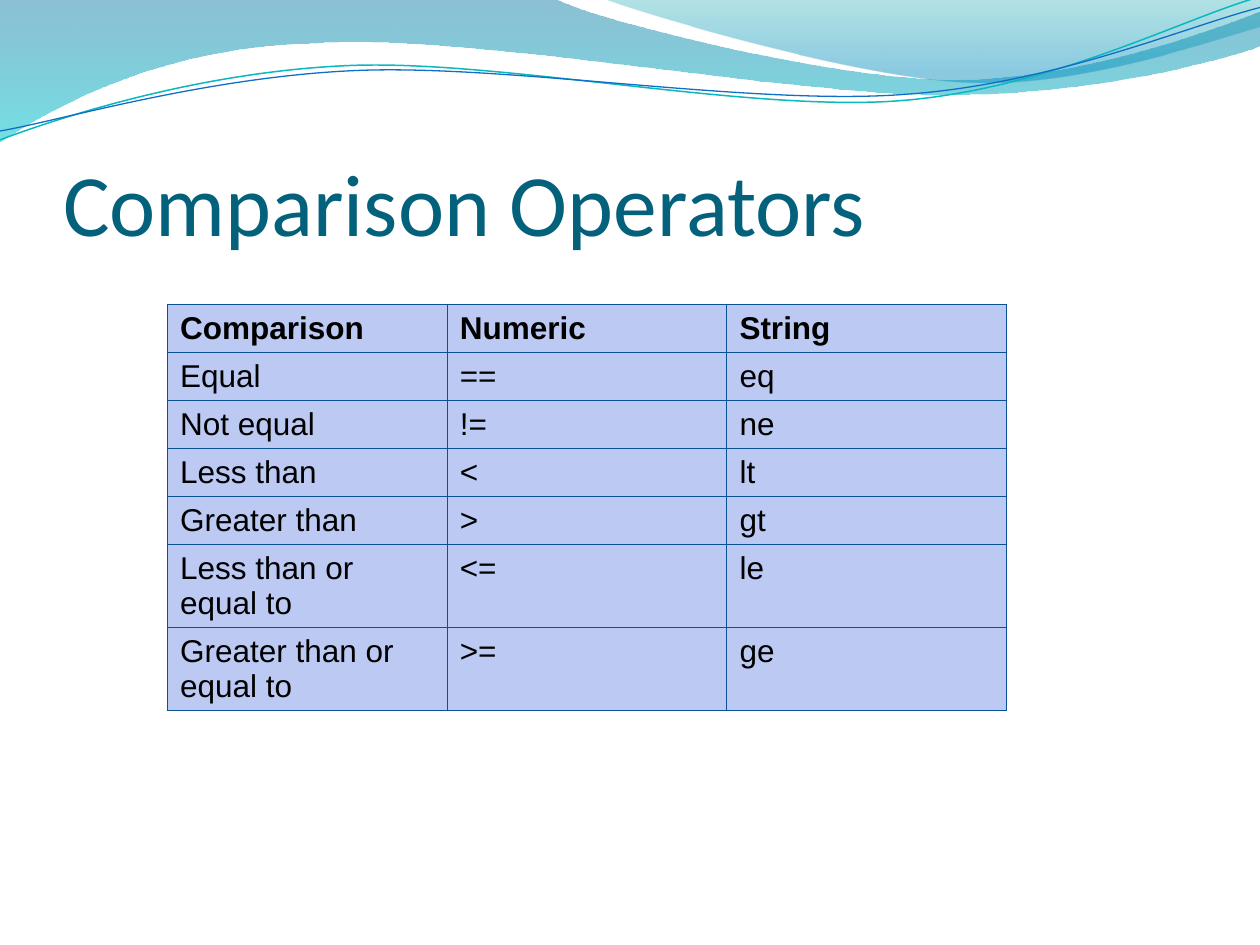
from math import cos, radians, sin

from lxml.etree import SubElement
from pptx import Presentation
from pptx.dml.color import RGBColor
from pptx.enum.text import MSO_ANCHOR, MSO_AUTO_SIZE, PP_ALIGN
from pptx.oxml.ns import qn
from pptx.util import Inches, Pt

TITLE = RGBColor(0x04, 0x61, 0x7B)
BLACK = RGBColor(0x00, 0x00, 0x00)
CELL = RGBColor(0xBB, 0xC9, 0xF3)
BORDER = RGBColor(0x09, 0x52, 0x95)
DEEP_BLUE = RGBColor(0x00, 0x74, 0xA1)
AQUA = RGBColor(0x00, 0xC6, 0xCF)
TEAL = RGBColor(0x00, 0xA1, 0xA9)
SKY = RGBColor(0x00, 0x8B, 0xBF)
TEAL_LINE = RGBColor(0x0A, 0xB8, 0xBF)
BLUE_LINE = RGBColor(0x0F, 0x6F, 0xC6)

WIDE_WAVE = [
    [(0, 0)], [(4.4, -0.01)],
    [(4.76, 0.17), (6.64, 0.63), (7.58, 0.63)],
    [(8.53, 0.63), (9.58, 0.26), (10, 0.09)],
    [(10.01, 0.36)],
    [(9.83, 0.44), (8.7, 0.76), (7.46, 0.75)],
    [(6.22, 0.75), (3.82, 0.28), (2.57, 0.34)],
    [(1.29, 0.36), (0.46, 0.83), (-0.01, 1.13)],
    [(0, 0)],
]
RIGHT_WAVE = [
    [(4.79, -0.01)],
    [(5.09, 0.11), (6.82, 0.62), (7.69, 0.65)],
    [(8.56, 0.69), (9.61, 0.32), (10, 0.21)],
    [(10, 0)], [(4.79, -0.01)],
]
TEAL_CURVE = [
    [(0, 1.11)],
    [(0.48, 0.93), (1.58, 0.57), (2.77, 0.52)],
    [(3.95, 0.47), (5.93, 0.89), (7.13, 0.8)],
    [(8.33, 0.71), (9.38, 0.15), (9.98, -0.02)],
]
BLUE_CURVE = [
    [(0, 1.04)],
    [(0.47, 0.96), (1.64, 0.61), (2.83, 0.56)],
    [(4.03, 0.51), (5.97, 0.84), (7.17, 0.75)],
    [(8.36, 0.67), (9.41, 0.21), (10, 0.06)],
]
ROWS = [
    ("Comparison", "Numeric", "String"),
    ("Equal", "==", "eq"),
    ("Not equal", "!=", "ne"),
    ("Less than", "<", "lt"),
    ("Greater than", ">", "gt"),
    ("Less than or equal to", "<=", "le"),
    ("Greater than or equal to", ">=", "ge"),
]


def turn(point, center, degrees):
    """Return the point turned clockwise about the center."""
    a = radians(degrees)
    dx, dy = point[0] - center[0], point[1] - center[1]
    return center[0] + dx * cos(a) - dy * sin(a), center[1] + dx * sin(a) + dy * cos(a)


class SlideBuilder:
    """Hold the style and the current slide."""

    title_font, body_font = "Calibri", "Arial"

    def __init__(self, s):
        self.s = s

    def style(self, p, font, size, color, bold=False):
        for r in p.runs:
            r.font.name, r.font.size, r.font.bold = font, Pt(size), bold
            r.font.color.rgb = color

    def outline(self, segments, close):
        points = [(Inches(x), Inches(y)) for segment in segments for x, y in segment]
        builder = self.s.shapes.build_freeform(*points[0])
        builder.add_line_segments(points[1:], close=close)
        sp = builder.convert_to_shape()
        sp.shadow.inherit = False
        lines = iter(list(sp.element.iter(qn("a:lnTo"))))
        for segment in segments[1:]:
            first, *rest = [next(lines) for _ in segment]
            if rest:
                curve = first.makeelement(qn("a:cubicBezTo"))
                first.addprevious(curve)
                for line in (first, *rest):
                    curve.append(line[0])
                    line.getparent().remove(line)
        return sp

    def wave(self, segments, stops):
        sp = self.outline(segments, True)
        sp.line.fill.background()
        sp.fill.gradient()
        sp.fill.gradient_angle = 270
        for stop, (position, color, _) in zip(sp.fill.gradient_stops, stops):
            stop.position = position
            stop.color.rgb = color
        nodes = list(sp.element.spPr.iter(qn("a:srgbClr")))
        for node, (_, _, opacity) in zip(nodes, stops):
            SubElement(node, qn("a:alpha"), val=str(opacity * 1000))

    def curve(self, segments, center, color, width, rotation=357.3):
        level = [[turn(point, center, -rotation) for point in segment] for segment in segments]
        sp = self.outline(level, False)
        sp.rotation = rotation
        sp.fill.background()
        sp.line.color.rgb = color
        sp.line.width = Pt(width)

    def title(self, text, left, top, width, height):
        sp = self.s.shapes.title
        sp.left, sp.top, sp.width, sp.height = map(Inches, (left, top, width, height))
        tf = sp.text_frame
        tf.text = text
        tf.word_wrap, tf.auto_size = True, MSO_AUTO_SIZE.NONE
        tf.vertical_anchor = MSO_ANCHOR.BOTTOM
        tf.margin_left = tf.margin_right = tf.margin_bottom = 0
        tf.margin_top = Inches(0.05)
        p = tf.paragraphs[0]
        p.alignment = PP_ALIGN.LEFT
        self.style(p, self.title_font, 50, TITLE)

    def borders(self, cell):
        tcPr = cell._tc.get_or_add_tcPr()
        for side in ("lnL", "lnR", "lnT", "lnB"):
            ln = SubElement(tcPr, qn(f"a:{side}"), w=str(Pt(0.75)))
            fill = SubElement(ln, qn("a:solidFill"))
            SubElement(fill, qn("a:srgbClr"), val=str(BORDER))

    def table(self, rows, left, top, column_width, height):
        columns = len(rows[0])
        frame = self.s.shapes.add_table(
            len(rows), columns, Inches(left), Inches(top),
            Inches(column_width * columns), Inches(height))
        table = frame.table
        for i, values in enumerate(rows):
            table.rows[i].height = 0
            for j, value in enumerate(values):
                cell = table.cell(i, j)
                cell.text = value
                self.borders(cell)
                cell.fill.solid()
                cell.fill.fore_color.rgb = CELL
                cell.vertical_anchor = MSO_ANCHOR.TOP if i else MSO_ANCHOR.BOTTOM
                self.style(cell.text_frame.paragraphs[0], self.body_font, 18, BLACK, i == 0)
        frame.height = Inches(height)


def main():
    prs = Presentation()
    prs.slide_width, prs.slide_height = Inches(10), Inches(7.5)
    slide = SlideBuilder(prs.slides.add_slide(prs.slide_layouts[5]))
    slide.wave(WIDE_WAVE, [(0, DEEP_BLUE, 45), (1, AQUA, 55)])
    slide.wave(RIGHT_WAVE, [(0, TEAL, 30), (0.8, SKY, 45)])
    slide.curve(TEAL_CURVE, (4.99, 0.58), TEAL_LINE, 0.85)
    slide.curve(BLUE_CURVE, (5, 0.59), BLUE_LINE, 0.75)
    slide.title("Comparison Operators", 0.5, 0.77, 9.08, 1.25)
    slide.table(ROWS, 1.33, 2.42, 2.22, 3.4)
    prs.save("out.pptx")


if __name__ == "__main__":
    main()
